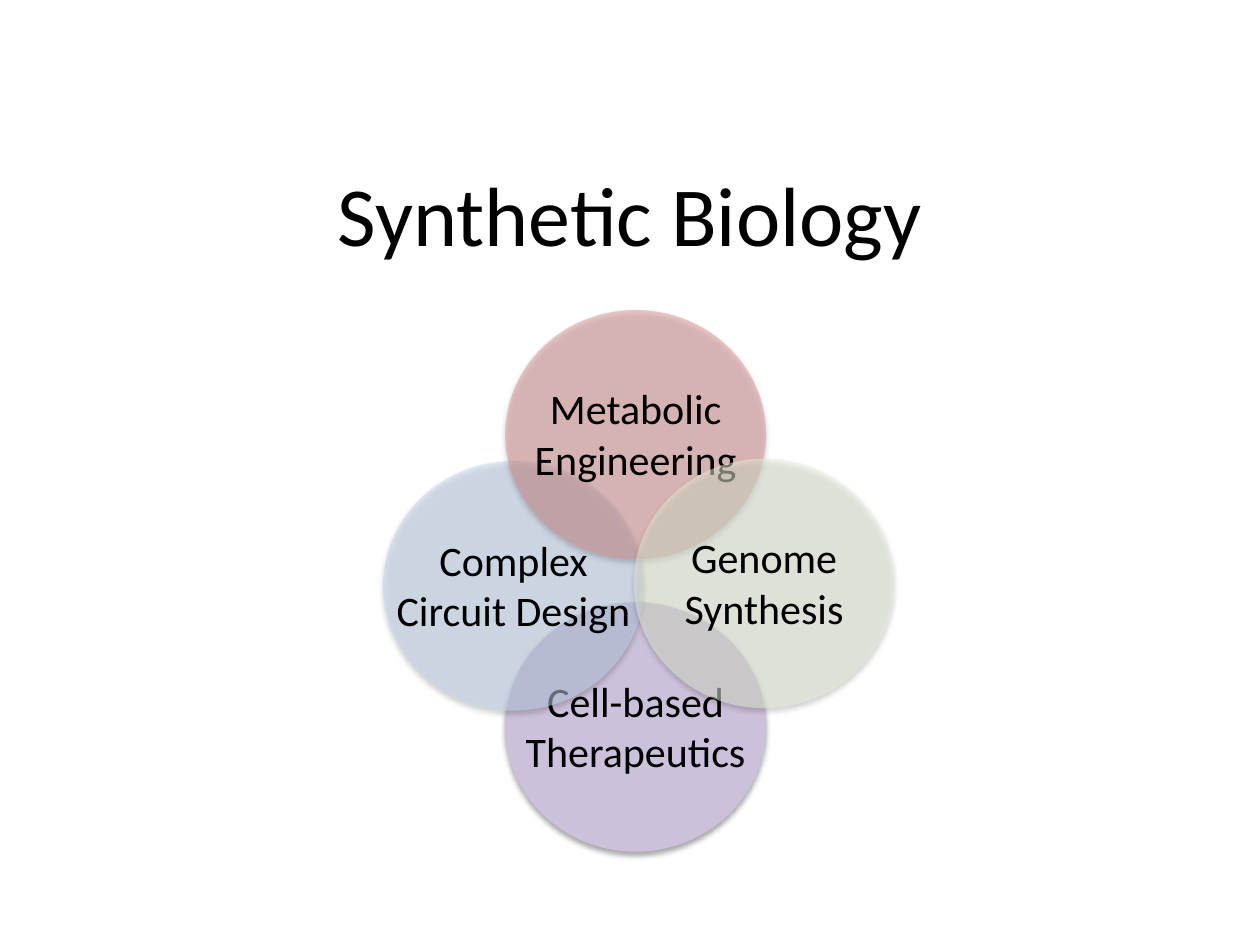
from lxml import etree
from pptx import Presentation
from pptx.dml.color import RGBColor
from pptx.enum import shapes, text
from pptx.oxml import ns
from pptx.util import Inches, Pt

COLORS = {
    "ink": "000000",
    "violet": "CCC1DA",
    "blue": "C6D9F1",
    "red": "D99694",
    "green": "EBF1DE",
}
FONT = "Calibri"
WIDE, HIGH = 2.07, 1.98  # size of each circle
DROP, TALL = 0.53, 0.91  # label offset below the circle top, label height

# Label, colour, opacity, circle left and top, label width; back to front
CIRCLES = [
    ("Cell-based Therapeutics", "violet", 100, 4.01, 4.78, 2.46),
    ("Complex Circuit Design", "blue", 50, 3.04, 3.66, 2.11),
    ("Metabolic Engineering", "red", 50, 4.01, 2.46, 2.11),
    ("Genome Synthesis", "green", 50, 5.03, 3.64, 2.46),
]


def rgb(name):
    return RGBColor.from_string(COLORS[name])


def write(frame, words, size, align):
    frame.text = words
    frame.auto_size = text.MSO_AUTO_SIZE.SHAPE_TO_FIT_TEXT
    frame.vertical_anchor = text.MSO_ANCHOR.TOP
    para = frame.paragraphs[0]
    para.alignment = align
    font = para.runs[0].font
    font.name, font.size = FONT, Pt(size)
    font.color.rgb = rgb("ink")


def set_alpha(color, percent):
    etree.SubElement(color, ns.qn("a:alpha"), val=str(percent * 1000))


def add_shadow(shape):
    shape.shadow.inherit = False
    effects = shape.element.spPr.find(ns.qn("a:effectLst"))
    outer = etree.SubElement(
        effects, ns.qn("a:outerShdw"), blurRad=str(Pt(3.1)),
        dist=str(Pt(1.8)), dir="5400000", rotWithShape="0")
    color = etree.SubElement(outer, ns.qn("a:srgbClr"), val=COLORS["ink"])
    set_alpha(color, 35)


def add_title(slide, left, top, width, height):
    title = slide.shapes.title
    title.left, title.top = Inches(left), Inches(top)
    title.width, title.height = Inches(width), Inches(height)
    write(title.text_frame, "Synthetic Biology", 48, text.PP_ALIGN.LEFT)
    title.text_frame.word_wrap = False


def add_circle(slide, words, color, alpha, left, top, width):
    group = slide.shapes.add_group_shape()
    # Disc
    disc = group.shapes.add_shape(
        shapes.MSO_SHAPE.OVAL, Inches(left), Inches(top),
        Inches(WIDE), Inches(HIGH))
    disc.fill.solid()
    disc.fill.fore_color.rgb = rgb(color)
    if alpha < 100:
        fill = disc.element.spPr.find(ns.qn("a:solidFill"))
        set_alpha(fill[0], alpha)
    disc.line.fill.background()
    add_shadow(disc)
    # Label, centred across the disc
    label = group.shapes.add_textbox(
        Inches(left + (WIDE - width) / 2), Inches(top + DROP),
        Inches(width), Inches(TALL))
    label.text_frame.word_wrap = True
    write(label.text_frame, words, 24, text.PP_ALIGN.CENTER)


def main():
    deck = Presentation()
    deck.slide_width, deck.slide_height = Inches(10), Inches(7.5)
    slide = deck.slides.add_slide(deck.slide_layouts[5])
    add_title(slide, 2.58, 1.24, 4.9, 0.91)
    for circle in CIRCLES:
        add_circle(slide, *circle)
    deck.save("out.pptx")


if __name__ == "__main__":
    main()
